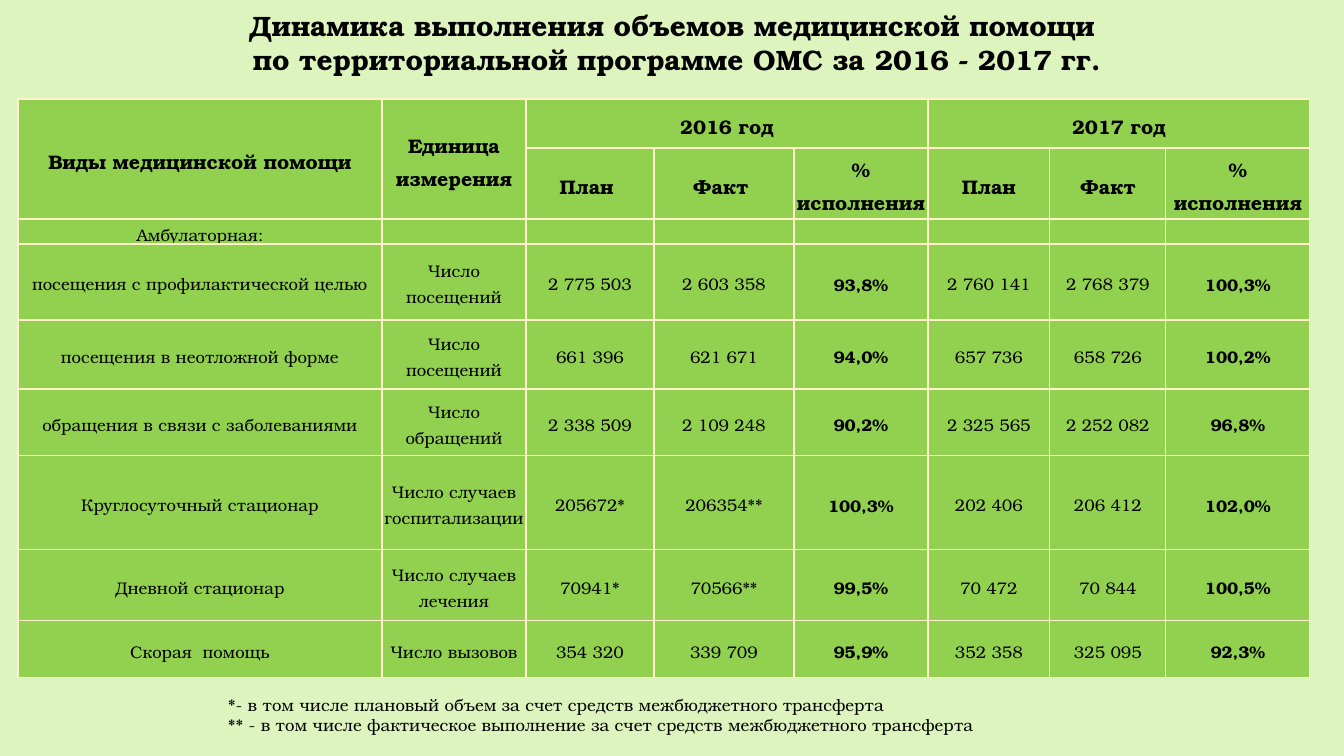
from lxml import etree
from pptx import Presentation
from pptx.dml.color import RGBColor
from pptx.enum import text
from pptx.oxml import ns
from pptx.util import Emu, Pt

SCALE = 914400 / 100.8
FONT = "TeX Gyre Bonum"
COLORS = {"background": "DDF4BF", "cell": "92D050", "border": "FFF2CC", "ink": "000000"}

COLUMN_WIDTHS = [364, 144, 128, 140, 134, 122, 116, 144]
ROW_HEIGHTS = [49, 71, 25, 76, 69, 67, 94, 71, 57]
PERCENT_COLUMNS = (4, 7)
HEADER_ROWS = 2
MERGES = [(0, 0, 1, 0), (0, 1, 1, 1), (0, 2, 0, 4), (0, 5, 0, 7)]
ROWS = [
    ["Виды медицинской помощи", "Единица измерения", "2016 год", "", "", "2017 год", "", ""],
    ["", "", "План ", "Факт ", "% исполнения", "План", "Факт", "% исполнения"],
    [" Амбулаторная: ", "", "", "", "", "", "", ""],
    ["посещения с профилактической целью", "Число посещений",
     "2 775 503", "2 603 358", "93,8%", "2 760 141", "2 768 379", "100,3%"],
    ["посещения в неотложной форме", "Число посещений",
     "661 396", "621 671", "94,0%", "657 736", "658 726", "100,2%"],
    ["обращения в связи с заболеваниями", "Число обращений",
     "2 338 509", "2 109 248", "90,2%", "2 325 565", "2 252 082", "96,8%"],
    ["Круглосуточный стационар", "Число случаев госпитализации",
     "205672*", "206354**", "100,3%", "202 406", "206 412", "102,0%"],
    ["Дневной стационар", "Число случаев лечения",
     "70941*", "70566**", "99,5%", "70 472", "70 844", "100,5%"],
    ["Скорая  помощь", "Число вызовов",
     "354 320", "339 709", "95,9%", "352 358", "325 095", "92,3%"],
]
TITLE = [
    [("Динамика выполнения объемов медицинской помощи", True)],
    [(" по территориальной программе ОМС за 2016 - 2017 гг.", True)],
]
FOOTNOTES = [
    [("*", True),
     ("- в том числе плановый объем за счет средств межбюджетного трансферта", False)],
    [("**", True),
     (" - в том числе фактическое выполнение за счет средств межбюджетного трансферта", False)],
]


def px(length):
    return Emu(round(length * SCALE))


def color(name):
    return RGBColor.from_string(COLORS[name])


def add_run(paragraph, wording, size, bold):
    run = paragraph.add_run()
    run.text = wording
    run.font.name = FONT
    run.font.size = Pt(size)
    run.font.bold = bold
    run.font.color.rgb = color("ink")


def add_text(slide, box, lines, size, align):
    frame = slide.shapes.add_textbox(*map(px, box)).text_frame
    frame.word_wrap = True
    frame.auto_size = text.MSO_AUTO_SIZE.SHAPE_TO_FIT_TEXT
    for index, line in enumerate(lines):
        paragraph = frame.add_paragraph() if index else frame.paragraphs[0]
        paragraph.alignment = align
        for wording, bold in line:
            add_run(paragraph, wording, size, bold)


def add_borders(cell):
    properties = cell._tc.get_or_add_tcPr()
    for side in ("a:lnL", "a:lnR", "a:lnT", "a:lnB"):
        line = etree.SubElement(properties, ns.qn(side), w=str(Pt(1)))
        fill = etree.SubElement(line, ns.qn("a:solidFill"))
        etree.SubElement(fill, ns.qn("a:srgbClr"), val=COLORS["border"])


def fill_cell(cell, wording, size, bold):
    add_borders(cell)
    cell.fill.solid()
    cell.fill.fore_color.rgb = color("cell")
    cell.vertical_anchor = text.MSO_ANCHOR.MIDDLE
    cell.margin_left = cell.margin_right = cell.margin_top = px(1)
    cell.margin_bottom = 0
    paragraph = cell.text_frame.paragraphs[0]
    if wording:
        paragraph.alignment = text.PP_ALIGN.CENTER
        paragraph.line_spacing = 1.15
        paragraph.space_after = Pt(10)
        add_run(paragraph, wording, size, bold)
    else:
        etree.SubElement(paragraph._p, ns.qn("a:endParaRPr"), sz=str(size * 100))


def add_volumes_table(slide):
    frame = slide.shapes.add_table(
        len(ROWS), len(COLUMN_WIDTHS),
        px(18), px(99), px(sum(COLUMN_WIDTHS)), px(sum(ROW_HEIGHTS)))
    table = frame.table
    table.first_row = table.horz_banding = False
    for column, width in zip(table.columns, COLUMN_WIDTHS):
        column.width = px(width)
    for row, height in zip(table.rows, ROW_HEIGHTS):
        row.height = px(height)
    for r, wordings in enumerate(ROWS):
        header = r < HEADER_ROWS
        for c, wording in enumerate(wordings):
            fill_cell(table.cell(r, c), wording, 14 if header else 12,
                      header or c in PERCENT_COLUMNS)
    for top, left, bottom, right in MERGES:
        table.cell(top, left).merge(table.cell(bottom, right))


def main():
    deck = Presentation()
    deck.slide_width, deck.slide_height = px(1344), px(756)
    slide = deck.slides.add_slide(deck.slide_layouts[6])
    slide.background.fill.solid()
    slide.background.fill.fore_color.rgb = color("background")
    add_text(slide, (168, 4, 1008, 78), TITLE, 20, text.PP_ALIGN.CENTER)
    add_volumes_table(slide)
    add_text(slide, (218, 690, 944, 51), FOOTNOTES, 12, text.PP_ALIGN.LEFT)
    deck.save("out.pptx")


if __name__ == "__main__":
    main()
